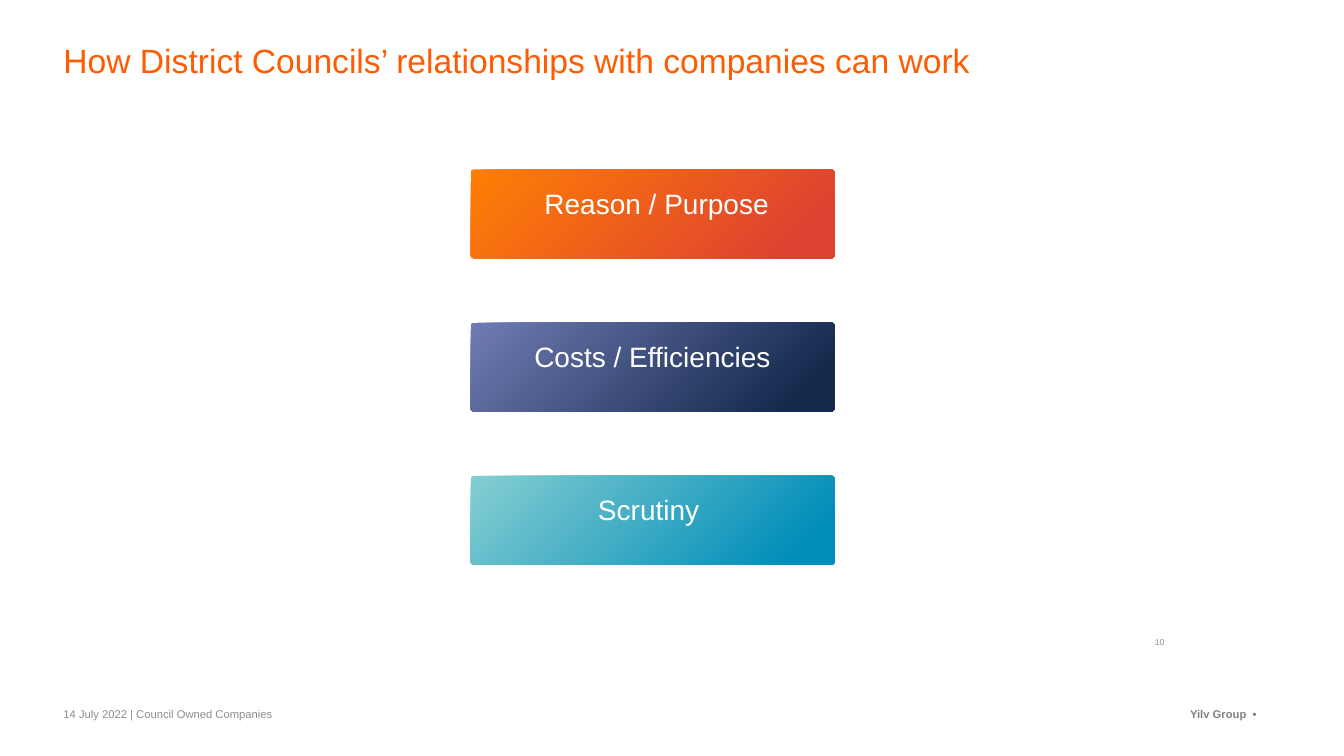
from pptx import Presentation
from pptx.dml.color import RGBColor
from pptx.enum.shapes import MSO_SHAPE as Shape
from pptx.enum.text import MSO_ANCHOR as Anchor, PP_ALIGN as Align
from pptx.util import Cm, Pt


def color(value):
    return RGBColor.from_string(value)


def write(box, text, size, shade, align=Align.LEFT, anchor=Anchor.TOP,
          insets=(0, 0, 0, 0), bold=False, wrap=True):
    frame = box.text_frame
    frame.word_wrap = wrap
    frame.vertical_anchor = anchor
    frame.margin_left, frame.margin_top, frame.margin_right, frame.margin_bottom = map(Cm, insets)
    para = frame.paragraphs[0]
    para.alignment = align
    span = para.add_run()
    span.text = text
    span.font.name = "Arial"
    span.font.size = Pt(size)
    span.font.bold = bold
    span.font.color.rgb = color(shade)
    return para


deck = Presentation()
deck.slide_width, deck.slide_height = Cm(33.87), Cm(19.05)
page = deck.slides.add_slide(deck.slide_layouts[6])
shapes = page.shapes

brand = shapes.add_textbox(Cm(29.9), Cm(17.83), Cm(1.85), Cm(0.33))
write(brand, "Yilv Group  • ", 8, "808183", Align.RIGHT, bold=True, wrap=False)

title = shapes.add_textbox(Cm(1.6), Cm(1), Cm(30.66), Cm(1.14))
write(title, "How District Councils’ relationships with companies can work", 24, "FF5B00")

number = shapes.add_textbox(Cm(28.3), Cm(15.9), Cm(1.04), Cm(0.58))
write(number, "10", 6, "8C8C8C", Align.RIGHT, Anchor.MIDDLE)

footer = shapes.add_textbox(Cm(1.6), Cm(17.83), Cm(24), Cm(0.58))
write(footer, "14 July 2022 | Council Owned Companies", 8, "8C8C8C")

themes = [
    ("Reason / Purpose", "FF7E04", "DD4132", 0.2, 2),
    ("Costs / Efficiencies", "707BB4", "13294B", 0.41, 0),
    ("Scrutiny ", "85CED1", "008DB9", 0.41, 0),
]
for row, (label, start, end, right_inset, spacing) in enumerate(themes):
    card = shapes.add_shape(Shape.ROUNDED_RECTANGLE,
                            Cm(11.86), Cm(4.27 + 3.86 * row), Cm(9.17), Cm(2.24))
    card.adjustments[0] = 0.036
    card.shadow.inherit = False
    card.line.fill.background()
    card.fill.gradient()
    card.fill.gradient_angle = 315
    for stop, shade, position in zip(card.fill.gradient_stops, (start, end), (0, 0.9)):
        stop.color.rgb = color(shade)
        stop.position = position
    para = write(card, label, 20, "FFFFFF", Align.CENTER, insets=(0.41, 0.41, right_inset, 0))
    para.space_before = para.space_after = Pt(spacing)

deck.save("out.pptx")
